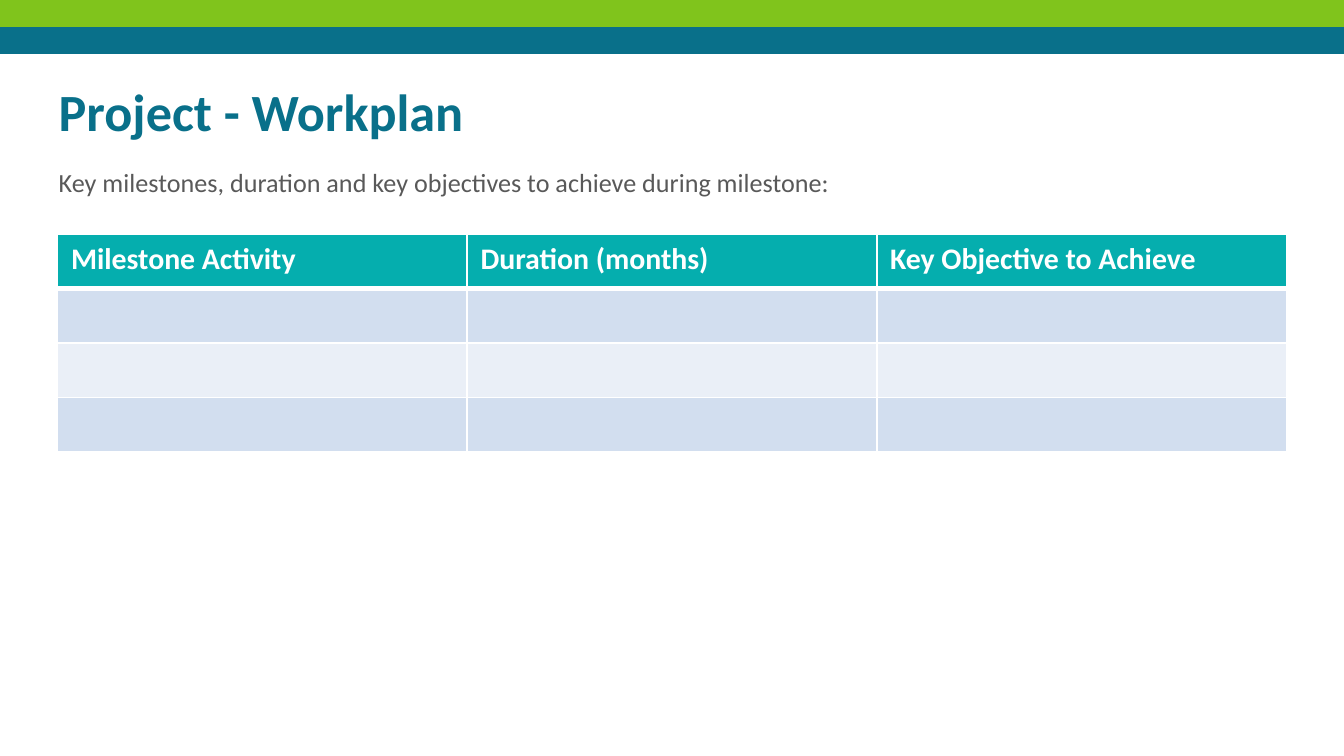
from lxml import etree
from pptx import Presentation
from pptx import util as u
from pptx.dml.color import RGBColor
from pptx.enum import shapes, text
from pptx.oxml.ns import qn

TEAL, GREEN, AQUA, GREY, WHITE = "09708A", "80C41C", "05AEAE", "595959", "FFFFFF"
BAND_FILLS = ["D2DEEF", "EAEFF7"]
HEADINGS = ["Milestone Activity", "Duration (months)", "Key Objective to Achieve"]
BODY_ROWS = 3
SLIDE_WIDTH, SLIDE_HEIGHT = u.Cm(25.4), u.Cm(14.29)


def color(value):
    return RGBColor.from_string(value)


def set_attributes(target, values):
    for name, value in values.items():
        setattr(target, name, value)


def write_text(frame, content, size, font_color, bold=False):
    paragraph = frame.paragraphs[0]
    paragraph.text = content
    paragraph.alignment = text.PP_ALIGN.LEFT
    set_attributes(paragraph.font, {"name": "Calibri", "size": u.Pt(size), "bold": bold})
    paragraph.font.color.rgb = color(font_color)


def place(shape, left, top, width, height):
    set_attributes(shape, {"left": u.Cm(left), "top": u.Cm(top),
                           "width": u.Cm(width), "height": u.Cm(height)})


def format_frame(frame, inset_x, inset_y):
    set_attributes(frame, {
        "word_wrap": True, "auto_size": text.MSO_AUTO_SIZE.NONE,
        "vertical_anchor": text.MSO_ANCHOR.TOP,
        "margin_left": u.Cm(inset_x), "margin_right": u.Cm(inset_x),
        "margin_top": u.Cm(inset_y), "margin_bottom": u.Cm(inset_y)})


def add_band(slide, top, fill):
    band = slide.shapes.add_shape(shapes.MSO_SHAPE.RECTANGLE, 0, u.Cm(top),
                                  SLIDE_WIDTH, u.Cm(0.51))
    band.shadow.inherit = False
    band.fill.solid()
    band.fill.fore_color.rgb = color(fill)
    band.line.fill.background()


def add_title(slide, content):
    title = slide.shapes.title
    place(title, 0.86, 1.25, 23.67, 1.6)
    format_frame(title.text_frame, 0.25, 0.25)
    write_text(title.text_frame, content, 28, TEAL, bold=True)


def add_intro(slide, content):
    box = slide.shapes.add_textbox(0, 0, 0, 0)
    place(box, 0.86, 3.02, 23.57, 1.04)
    format_frame(box.text_frame, 0.25, 0.13)
    write_text(box.text_frame, content, 14, GREY)


def set_borders(cell, widths):
    properties = cell._tc.get_or_add_tcPr()
    for position, (side, width) in enumerate(widths.items()):
        line = etree.Element(qn(f"a:ln{side}"), w=str(u.Pt(width)))
        fill = etree.SubElement(line, qn("a:solidFill"))
        etree.SubElement(fill, qn("a:srgbClr"), val=WHITE)
        properties.insert(position, line)  # borders come before the fill


def add_workplan_table(slide):
    row_height = u.Cm(1.03)
    table = slide.shapes.add_table(
        BODY_ROWS + 1, len(HEADINGS), u.Cm(1.09), u.Cm(4.42),
        u.Cm(23.22), row_height * (BODY_ROWS + 1)).table
    for row_number, row in enumerate(table.rows):
        row.height = row_height
        is_header = row_number == 0
        fill = AQUA if is_header else BAND_FILLS[(row_number - 1) % 2]
        for column, cell in enumerate(row.cells):
            cell.fill.solid()
            cell.fill.fore_color.rgb = color(fill)
            # A thicker rule separates the header from the body
            set_borders(cell, {"L": 1, "R": 1, "T": 3 if row_number == 1 else 1,
                               "B": 3 if is_header else 1})
            if is_header:
                write_text(cell.text_frame, HEADINGS[column], 16, WHITE, bold=True)


def main():
    presentation = Presentation()
    set_attributes(presentation, {"slide_width": SLIDE_WIDTH, "slide_height": SLIDE_HEIGHT})
    slide = presentation.slides.add_slide(presentation.slide_layouts[5])

    # Header bands
    add_band(slide, 0.51, TEAL)
    add_band(slide, 0, GREEN)

    # Heading and introduction
    add_title(slide, "Project - Workplan")
    add_intro(slide, "Key milestones, duration and key objectives to achieve during milestone:")

    # Milestones
    add_workplan_table(slide)
    presentation.save("out.pptx")


if __name__ == "__main__":
    main()
